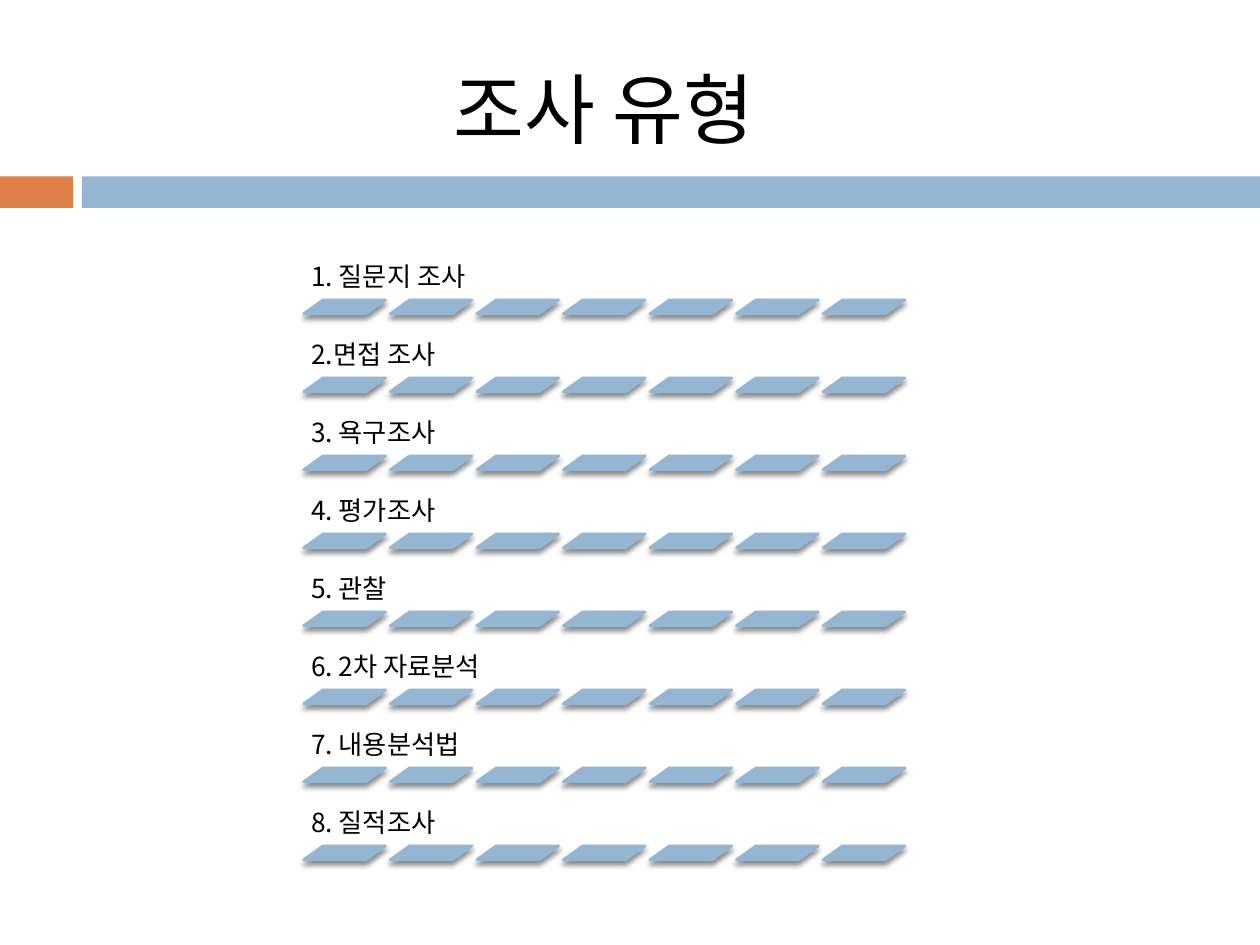
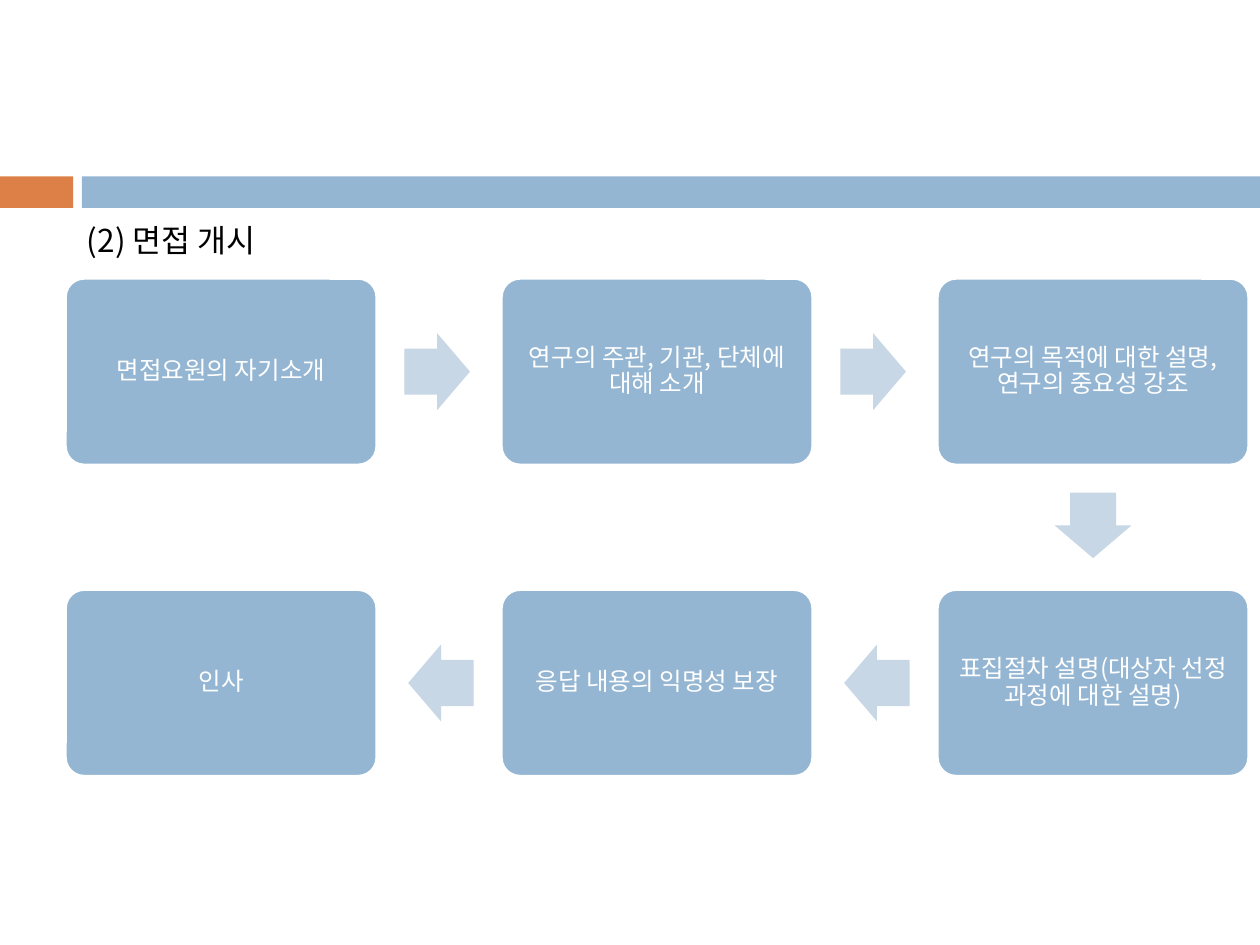
import pptx
import pptx.dml.color
import pptx.enum.shapes
import pptx.enum.text
import pptx.oxml
import pptx.oxml.ns
import pptx.util

Inches = pptx.util.Inches
Pt = pptx.util.Pt
SHAPE = pptx.enum.shapes.MSO_SHAPE
ANCHOR = pptx.enum.text.MSO_ANCHOR
ALIGN = pptx.enum.text.PP_ALIGN

# Shared look
FONT = "Noto Sans CJK KR"
BLUE, ORANGE, PALE_BLUE = "94B6D2", "DD8047", "C8D7E5"
BLACK, WHITE = "000000", "FFFFFF"
TITLE_ONLY = 5
SMALL_INSET = 0.06

# Survey types, each underlined by a row of slanted dashes
SURVEY_TYPES = ["1. 질문지 조사", "2.면접 조사", "3. 욕구조사", "4. 평가조사",
                "5. 관찰", "6. 2차 자료분석", "7. 내용분석법", "8. 질적조사"]
LIST_LEFT, LIST_TOP, ROW_PITCH = 2.41, 1.94, 0.619
LABEL_WIDTH, LABEL_HEIGHT = 4.87, 0.44
DASH_COUNT, DASH_PITCH, DASH_WIDTH, DASH_HEIGHT = 7, 0.687, 0.65, 0.11

# Interview steps with column, row and the direction of the next step
STEPS = [
    ("면접요원의 자기소개", 0, 0, (1, 0)),
    ("연구의 주관, 기관, 단체에 대해 소개", 1, 0, (1, 0)),
    ("연구의 목적에 대한 설명, 연구의 중요성 강조", 2, 0, (0, 1)),
    ("표집절차 설명(대상자 선정 과정에 대한 설명)", 2, 1, (-1, 0)),
    ("응답 내용의 익명성 보장", 1, 1, (-1, 0)),
    ("인사", 0, 1, None),
]
ROTATION = {(1, 0): 0, (0, 1): 90, (-1, 0): 180}
CARD_LEFT, CARD_TOP, CARD_WIDTH, CARD_HEIGHT = 0.52, 2.21, 2.47, 1.48
COLUMN_PITCH, CARD_ROW_PITCH = 3.46, 2.47
ARROW_LENGTH, ARROW_HEIGHT, ARROW_GAP = 0.52, 0.61, 0.22


def color(hex_value):
    return pptx.dml.color.RGBColor.from_string(hex_value)


def set_attributes(target, values):
    for name, value in values.items():
        setattr(target, name, value)


def write_text(shape, text, size, hex_value, anchor=ANCHOR.TOP,
               align=ALIGN.LEFT, line_spacing=1.0, inset=None):
    frame = shape.text_frame
    set_attributes(frame, {"word_wrap": True, "vertical_anchor": anchor,
                           "auto_size": pptx.enum.text.MSO_AUTO_SIZE.NONE})
    if inset is not None:
        sides = ("left", "top", "right", "bottom")
        set_attributes(frame, {f"margin_{side}": Inches(inset) for side in sides})
    paragraph = frame.paragraphs[0]
    set_attributes(paragraph, {"alignment": align, "line_spacing": line_spacing})
    run = paragraph.add_run()
    run.text = text
    set_attributes(run.font, {"size": Pt(size), "name": FONT})
    run.font.color.rgb = color(hex_value)
    # Korean letters take the East Asian typeface
    east_asian = pptx.oxml.parse_xml(
        f'<a:ea {pptx.oxml.ns.nsdecls("a")} typeface="{FONT}"/>')
    run.font._element.find(pptx.oxml.ns.qn("a:latin")).addnext(east_asian)


def add_filled_shape(slide, kind, box, fill, line=None, adjustments=()):
    shape = slide.shapes.add_shape(kind, *map(Inches, box))
    shape.shadow.inherit = False
    shape.fill.solid()
    shape.fill.fore_color.rgb = color(fill)
    if line:
        shape.line.color.rgb = color(line)
        shape.line.width = Pt(1.5)
    else:
        shape.line.fill.background()
    for index, value in enumerate(adjustments):
        shape.adjustments[index] = value
    return shape


def add_soft_shadow(shape):
    effects = shape._element.spPr.find(pptx.oxml.ns.qn("a:effectLst"))
    effects.append(pptx.oxml.parse_xml(
        f'<a:outerShdw {pptx.oxml.ns.nsdecls("a")} blurRad="{Pt(3)}" '
        f'dist="{Pt(2.4)}" dir="5400000" rotWithShape="0">'
        f'<a:srgbClr val="{BLACK}"><a:alpha val="45000"/></a:srgbClr>'
        '</a:outerShdw>'))


def add_banded_slide(presentation, title, box, size):
    slide = presentation.slides.add_slide(presentation.slide_layouts[TITLE_ONLY])
    add_filled_shape(slide, SHAPE.RECTANGLE, (0, 1.4, 0.58, 0.25), ORANGE)
    add_filled_shape(slide, SHAPE.RECTANGLE, (0.65, 1.4, 9.35, 0.25), BLUE)
    places = zip(("left", "top", "width", "height"), map(Inches, box))
    set_attributes(slide.shapes.title, dict(places))
    write_text(slide.shapes.title, title, size, BLACK)
    return slide


def add_survey_type(slide, text, top):
    label = slide.shapes.add_textbox(Inches(LIST_LEFT), Inches(top),
                                     Inches(LABEL_WIDTH), Inches(LABEL_HEIGHT))
    write_text(label, text, 15, BLACK, ANCHOR.BOTTOM,
               line_spacing=0.9, inset=SMALL_INSET)
    for index in range(DASH_COUNT):
        box = (LIST_LEFT + index * DASH_PITCH, top + LABEL_HEIGHT,
               DASH_WIDTH, DASH_HEIGHT)
        dash = add_filled_shape(slide, SHAPE.PARALLELOGRAM, box, BLUE, BLUE, [1.408])
        add_soft_shadow(dash)


def add_step(slide, text, column, row, direction):
    left = CARD_LEFT + column * COLUMN_PITCH
    top = CARD_TOP + row * CARD_ROW_PITCH
    card = add_filled_shape(slide, SHAPE.ROUNDED_RECTANGLE,
                            (left, top, CARD_WIDTH, CARD_HEIGHT), BLUE, WHITE, [0.1])
    write_text(card, text, 14, WHITE, ANCHOR.MIDDLE, ALIGN.CENTER, 0.9, SMALL_INSET)
    if direction:
        # The arrow starts a fixed gap outside the card edge
        reach = ARROW_GAP + ARROW_LENGTH / 2
        center_x = left + CARD_WIDTH / 2 + direction[0] * (CARD_WIDTH / 2 + reach)
        center_y = top + CARD_HEIGHT / 2 + direction[1] * (CARD_HEIGHT / 2 + reach)
        box = (center_x - ARROW_LENGTH / 2, center_y - ARROW_HEIGHT / 2,
               ARROW_LENGTH, ARROW_HEIGHT)
        arrow = add_filled_shape(slide, SHAPE.RIGHT_ARROW, box, PALE_BLUE,
                                 adjustments=[0.6, 0.5])
        arrow.rotation = ROTATION[direction]


def main():
    presentation = pptx.Presentation()
    set_attributes(presentation, {"slide_width": Inches(10),
                                  "slide_height": Inches(7.5)})

    # Survey types
    slide = add_banded_slide(presentation, "조사 유형", (3.5, 0.44, 2.91, 0.84), 44)
    for index, text in enumerate(SURVEY_TYPES):
        add_survey_type(slide, text, LIST_TOP + index * ROW_PITCH)

    # Opening the interview
    slide = add_banded_slide(presentation, "(2) 면접 개시", (0.59, 1.7, 3.78, 0.4), 18)
    for step in STEPS:
        add_step(slide, *step)

    presentation.save("out.pptx")


if __name__ == "__main__":
    main()
